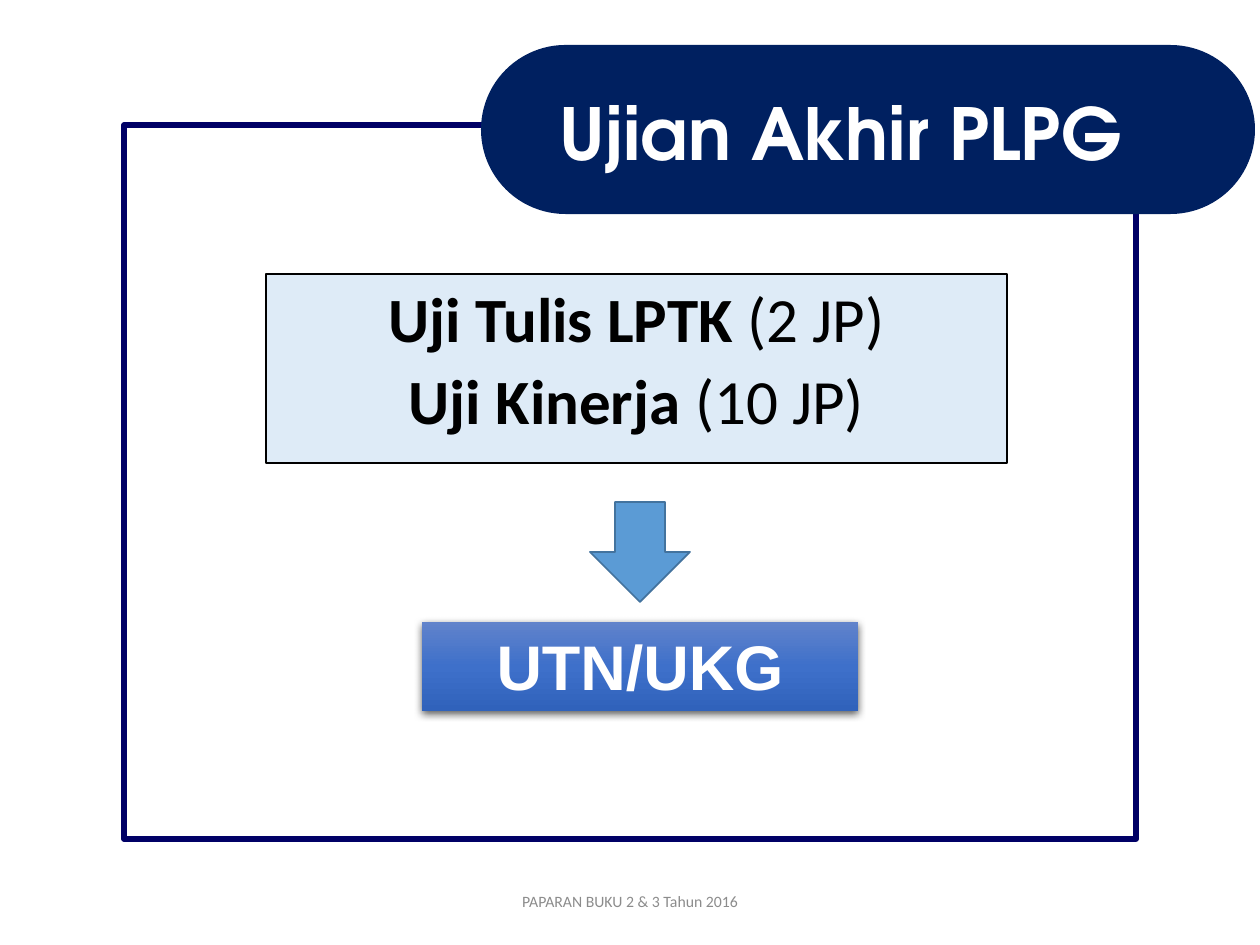
from copy import deepcopy

from lxml.etree import SubElement
from pptx import Presentation
from pptx.dml.color import RGBColor
from pptx.enum.shapes import MSO_SHAPE as Shape
from pptx.enum.text import MSO_ANCHOR as Anchor, MSO_AUTO_SIZE as AutoSize, PP_ALIGN as Align
from pptx.oxml.ns import qn
from pptx.util import Emu, Pt

PX = 914400 / 126
TITLE_ONLY = 5
COLORS = {
    "frame": "000066", "banner": "002060", "panel": "DEEBF7",
    "arrow": "5B9BD5", "arrow_line": "43739E", "footer": "8C8C8C",
    "black": "000000", "white": "FFFFFF",
    "button_top": "6183CB", "button_middle": "3E70CA", "button_bottom": "3062BB",
}


def px(value):
    return Emu(round(value * PX))


def color(name):
    return RGBColor.from_string(COLORS[name])


def write_text(shape, paragraphs, font, size, ink, align=Align.CENTER,
               anchor=Anchor.TOP, margins=(12, 6, 12, 6), space_before=0):
    """Fill a shape with paragraphs, each a list of (text, bold) spans."""
    frame = shape.text_frame
    frame.word_wrap = True
    frame.auto_size = AutoSize.NONE
    frame.vertical_anchor = anchor
    (frame.margin_left, frame.margin_top,
     frame.margin_right, frame.margin_bottom) = map(px, margins)
    for index, spans in enumerate(paragraphs):
        para = frame.add_paragraph() if index else frame.paragraphs[0]
        para.alignment = align
        para.space_before = Pt(space_before)
        for text, bold in spans:
            span = para.add_run()
            span.text = text
            span.font.name = font
            span.font.size = Pt(size)
            span.font.bold = bold
            span.font.color.rgb = color(ink)


def add_block(slide, kind, bounds, fill=None, line=None, width=1):
    block = slide.shapes.add_shape(kind, *map(px, bounds))
    block.shadow.inherit = False
    if fill:
        block.fill.solid()
        block.fill.fore_color.rgb = color(fill)
    else:
        block.fill.background()
    if line:
        block.line.color.rgb = color(line)
        block.line.width = Pt(width)
    else:
        block.line.fill.background()
    return block


def fill_gradient(shape, stops):
    """Fill from top to bottom with (position, color name) stops."""
    shape.fill.gradient()
    shape.fill.gradient_angle = 270
    stop_list = next(shape.element.iter(qn("a:gsLst")))
    while len(stop_list) < len(stops):
        stop_list.append(deepcopy(stop_list[0]))
    for stop, (position, name) in zip(shape.fill.gradient_stops, stops):
        stop.position = position
        stop.color.rgb = color(name)


def add_drop_shadow(shape, blur, distance, opacity):
    effects = next(shape.element.iter(qn("a:effectLst")))
    shadow = SubElement(effects, qn("a:outerShdw"), blurRad=str(Pt(blur)),
                        dist=str(Pt(distance)), dir="5400000", rotWithShape="0")
    tint = SubElement(shadow, qn("a:srgbClr"), val=COLORS["black"])
    SubElement(tint, qn("a:alpha"), val=str(opacity * 1000))


def place_title(slide, text, bounds):
    title = slide.shapes.title
    title.left, title.top, title.width, title.height = map(px, bounds)
    write_text(title, [[(text, True)]], "TeX Gyre Adventor", 41, "white",
               align=Align.JUSTIFY, anchor=Anchor.BOTTOM, margins=(118, 6, 12, 6))
    # The title sits in front of the banner.
    slide.shapes.element.append(title.element)


def add_footer(slide, text, bounds):
    footer = slide.shapes.add_textbox(*map(px, bounds))
    write_text(footer, [[(text, False)]], "Calibri", 9, "footer", anchor=Anchor.MIDDLE)


def main():
    deck = Presentation()
    deck.slide_width, deck.slide_height = px(1260), px(945)
    slide = deck.slides.add_slide(deck.slide_layouts[TITLE_ONLY])

    add_block(slide, Shape.RECTANGLE, (124, 125, 1012, 714), line="frame", width=3)
    banner = add_block(slide, Shape.ROUNDED_RECTANGLE, (481, 45, 774, 169), fill="banner")
    banner.adjustments[0] = 0.5
    add_footer(slide, "PAPARAN BUKU 2 & 3 Tahun 2016", (417, 876, 426, 50))
    place_title(slide, "Ujian Akhir PLPG", (441, 55, 893, 126))

    tests = add_block(slide, Shape.RECTANGLE, (266, 274, 741, 189),
                      fill="panel", line="black", width=0.75)
    write_text(tests, [[("Uji Tulis LPTK ", True), ("(2 JP)", False)],
                       [("Uji Kinerja ", True), ("(10 JP)", False)]],
               "Calibri", 36, "black", margins=(6, 6, 6, 6), space_before=3.5)

    add_block(slide, Shape.DOWN_ARROW, (590, 502, 100, 100),
              fill="arrow", line="arrow_line")

    final_test = add_block(slide, Shape.RECTANGLE, (422, 622, 436, 89))
    fill_gradient(final_test, [(0, "button_top"), (0.5, "button_middle"),
                               (1, "button_bottom")])
    add_drop_shadow(final_test, blur=4.5, distance=1.5, opacity=63)
    write_text(final_test, [[("UTN/UKG", True)]], "Arial", 36, "white")

    deck.save("out.pptx")


if __name__ == "__main__":
    main()
